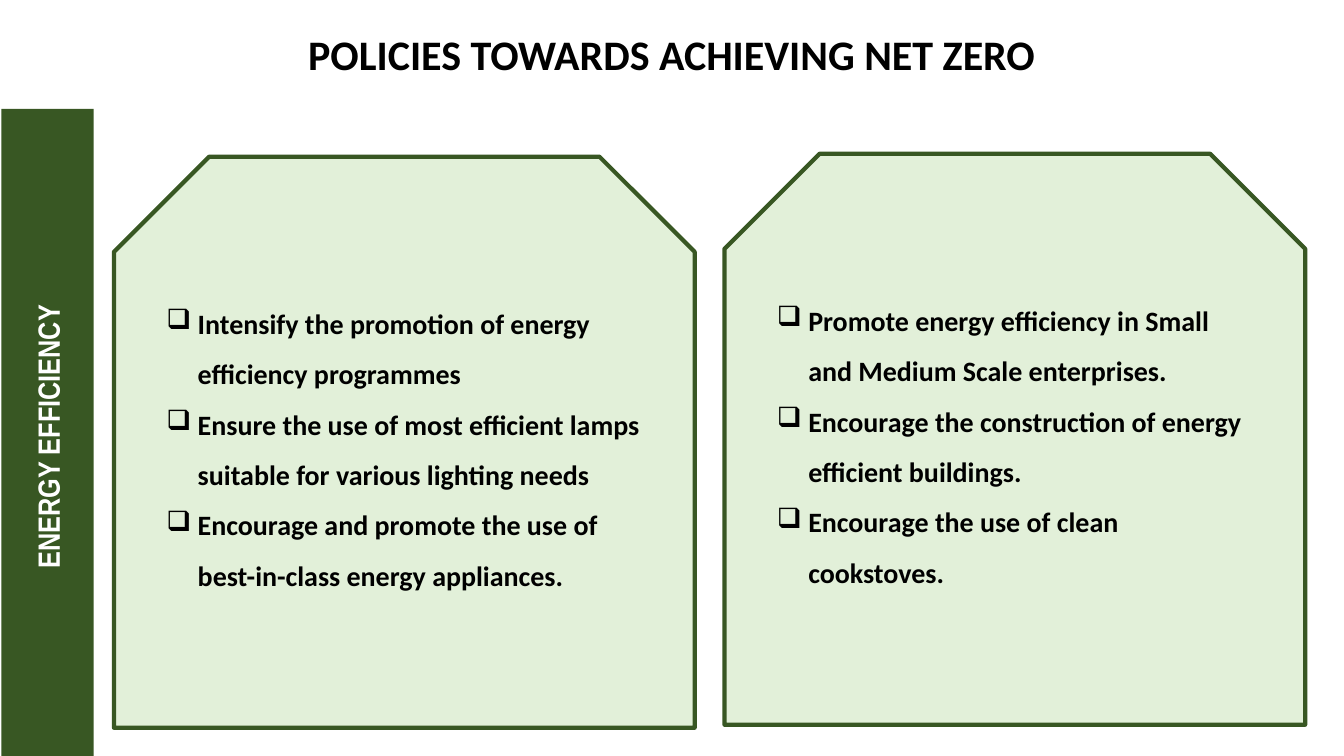
"""Builds the energy efficiency policies slide."""
from dataclasses import dataclass

from lxml.etree import SubElement
from pptx import Presentation
from pptx.dml.color import RGBColor
from pptx.enum.shapes import MSO_SHAPE
from pptx.enum.text import MSO_ANCHOR, PP_ALIGN
from pptx.oxml.ns import qn
from pptx.util import Inches, Pt


@dataclass(frozen=True)
class Theme:
    """Colours, fonts and type sizes of the slide."""
    dark: RGBColor = RGBColor(0x38, 0x57, 0x23)
    pale: RGBColor = RGBColor(0xE2, 0xF0, 0xD9)
    ink: RGBColor = RGBColor(0, 0, 0)
    white: RGBColor = RGBColor(255, 255, 255)
    font: str = "Calibri"
    band_font: str = "Arial Narrow"
    title_size: int = 60
    band_size: int = 44
    card_size: int = 40
    outline: int = 6


class PolicySlide:
    """Holds the theme and the current slide and draws its elements."""

    def __init__(self, page, theme):
        """Keep the slide and its style."""
        self.page = page
        self.theme = theme

    def add_span(self, paragraph, text, **formats):
        """Add one bold span with the given font values."""
        span = paragraph.add_run()
        span.text = text
        color = formats.pop("color", self.theme.ink)
        for name, value in {"name": self.theme.font, "bold": True, **formats}.items():
            setattr(span.font, name, value)
        span.font.color.rgb = color

    def shape(self, kind, place, fill):
        """Add a flat filled shape without an outline."""
        box = self.page.shapes.add_shape(kind, *map(Inches, place))
        box.shadow.inherit = False
        box.fill.solid()
        box.fill.fore_color.rgb = fill
        box.line.fill.background()
        box.text_frame.word_wrap = True
        box.text_frame.vertical_anchor = MSO_ANCHOR.MIDDLE
        return box

    def title(self, text, place):
        """Add the centred heading."""
        frame = self.page.shapes.add_textbox(*map(Inches, place)).text_frame
        frame.word_wrap = True
        paragraph = frame.paragraphs[0]
        paragraph.alignment = PP_ALIGN.CENTER
        self.add_span(paragraph, text, size=Pt(self.theme.title_size))

    def band(self, text, place):
        """Add the side band with text that reads upwards."""
        frame = self.shape(MSO_SHAPE.RECTANGLE, place, self.theme.dark).text_frame
        frame._txBody.bodyPr.set("vert", "vert270")
        paragraph = frame.paragraphs[0]
        paragraph.alignment = PP_ALIGN.CENTER
        self.add_span(paragraph, text, name=self.theme.band_font,
                      size=Pt(self.theme.band_size), color=self.theme.white)

    def bullet(self, paragraph, indent):
        """Give a paragraph a hanging box bullet."""
        properties = paragraph._p.get_or_add_pPr()
        for name, value in {"marL": indent, "indent": -indent}.items():
            properties.set(name, str(value))
        SubElement(properties, qn("a:buChar")).set("char", "❑")

    def card(self, policies, place):
        """Add a snipped card with a list of policies."""
        box = self.shape(MSO_SHAPE.SNIP_2_SAME_RECTANGLE, place, self.theme.pale)
        box.line.color.rgb = self.theme.dark
        box.line.width = Pt(self.theme.outline)
        frame = box.text_frame
        frame.margin_bottom = Inches(1.05)
        for index, policy in enumerate(policies):
            paragraph = frame.add_paragraph() if index else frame.paragraphs[0]
            self.bullet(paragraph, Inches(0.62))
            paragraph.alignment = PP_ALIGN.LEFT
            paragraph.line_spacing = 1.5
            self.add_span(paragraph, policy, size=Pt(self.theme.card_size))


CARDS = [
    ((2.26, 3.11), [
        "Intensify the promotion of energy efficiency programmes",
        "Ensure the use of most efficient lamps suitable for various lighting needs",
        "Encourage and promote the use of best-in-class energy appliances.",
    ]),
    ((14.37, 3.05), [
        "Promote energy efficiency in Small and Medium Scale enterprises.",
        "Encourage the construction of energy efficient buildings.",
        "Encourage the use of clean cookstoves.",
    ]),
]
CARD_SIZE = (11.52, 11.33)


def main():
    """Build and save the deck."""
    deck = Presentation()
    deck.slide_width, deck.slide_height = Inches(26.66), Inches(15)
    slide = PolicySlide(deck.slides.add_slide(deck.slide_layouts[6]), Theme())
    slide.title("POLICIES TOWARDS ACHIEVING NET ZERO", (3.28, 0.52, 20.09, 1.11))
    slide.band("ENERGY EFFICIENCY", (0.03, 2.16, 1.83, 13.01))
    for corner, policies in CARDS:
        slide.card(policies, corner + CARD_SIZE)
    deck.save("out.pptx")


if __name__ == "__main__":
    main()
